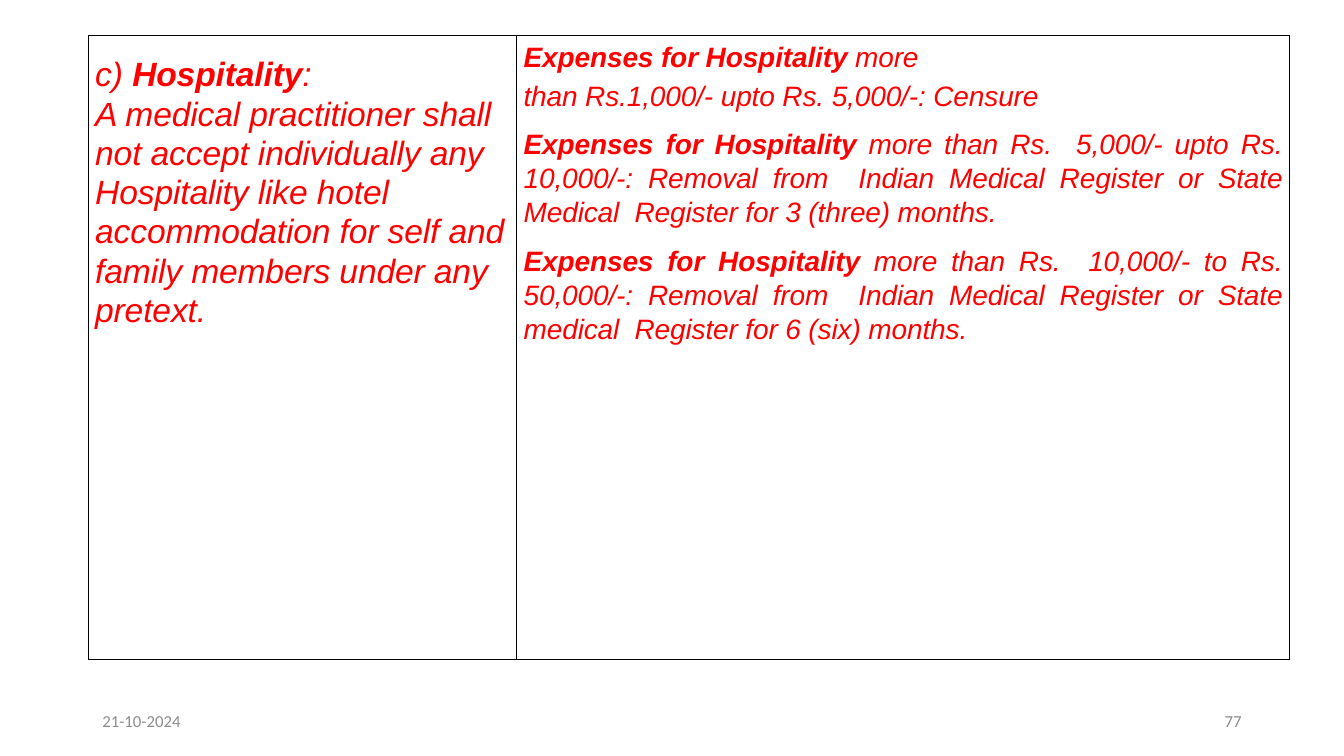
"""Build a slide with a two-column table on hospitality rules and penalties."""
from dataclasses import dataclass

from lxml import etree
from pptx import Presentation
from pptx.dml.color import RGBColor
from pptx.enum.text import MSO_ANCHOR, PP_ALIGN
from pptx.oxml.ns import qn
from pptx.util import Emu, Inches, Pt

LEFT, RIGHT, JUSTIFY = PP_ALIGN.LEFT, PP_ALIGN.RIGHT, PP_ALIGN.JUSTIFY
MIDDLE = MSO_ANCHOR.MIDDLE
GRID_COLS, GRID_ROWS = 160, 90
SLIDE_W, SLIDE_H = Inches(13.33), Inches(7.5)
RED, GREY, BLACK = "FF0000", "8C8C8C", "000000"
TABLE_LEFT, TABLE_TOP = 10.5, 4.2
COL_WIDTHS = (51, 92)
ROW_HEIGHTS = (41.4, 14.3, 14.3, 4.3)
TEXT_INSET = 0.84
FOOTER_TOP, FOOTER_W, FOOTER_H = 83.4, 36, 4.8


@dataclass(frozen=True)
class Style:
    size: float
    color: str
    font: str = "Arial"
    italic: bool = False
    tracking: int = 0


@dataclass(frozen=True)
class Run:
    text: str
    bold: bool = False


@dataclass(frozen=True)
class Para:
    runs: tuple[Run, ...]
    align: PP_ALIGN = LEFT
    spacing: float | Pt = 1.0
    before: float = 0


@dataclass(frozen=True)
class Footer:
    text: str
    left: float
    align: PP_ALIGN


RULE_STYLE = Style(24, RED, italic=True, tracking=-10)
PENALTY_STYLE = Style(20, RED, italic=True, tracking=-10)
FOOTER_STYLE = Style(12, GREY, font="Calibri")

EXPENSES = Run("Expenses for Hospitality ", bold=True)
RULE_LINES = (
    (Run("c) "), Run("Hospitality", bold=True), Run(":")),
    (Run("A medical practitioner shall"),),
    (Run("not accept individually any"),),
    (Run("Hospitality like hotel"),),
    (Run("accommodation for self and"),),
    (Run("family members under any"),),
    (Run("pretext."),),
)
RULE = tuple(Para(runs, spacing=Pt(28)) for runs in RULE_LINES)
PENALTIES = (
    Para((EXPENSES, Run("more")), JUSTIFY, Pt(27.4)),
    Para((Run("than Rs.1,000/- upto Rs. 5,000/-: Censure"),), JUSTIFY, Pt(27.4)),
    Para((EXPENSES, Run("more than Rs.  5,000/- upto Rs. 10,000/-: Removal from  Indian "
                        "Medical Register or State Medical  Register for 3 (three) months.")),
         JUSTIFY, 1.09, 10.4),
    Para((EXPENSES, Run("more than Rs.  10,000/- to Rs. 50,000/-: Removal from  Indian "
                        "Medical Register or State medical  Register for 6 (six) months.")),
         JUSTIFY, 1.09, 10.4),
)
FOOTERS = (Footer("21-10-2024", 11, LEFT), Footer("77", 113, RIGHT))


def col(n: float) -> Emu:
    """Return the width of n grid columns."""
    return Emu(round(SLIDE_W * n / GRID_COLS))


def row(n: float) -> Emu:
    """Return the height of n grid rows."""
    return Emu(round(SLIDE_H * n / GRID_ROWS))


def rgb(color: str) -> RGBColor:
    """Turn a hex string into a colour."""
    return RGBColor.from_string(color)


def write(tf, paras: tuple[Para, ...], style: Style) -> None:
    """Fill a text frame run by run."""
    for i, para in enumerate(paras):
        p = tf.add_paragraph() if i else tf.paragraphs[0]
        p.alignment = para.align
        p.line_spacing = para.spacing
        p.space_before = Pt(para.before)
        for run in para.runs:
            r = p.add_run()
            r.text = run.text
            r.font.name = style.font
            r.font.size = Pt(style.size)
            r.font.bold = run.bold
            r.font.italic = style.italic
            r.font.color.rgb = rgb(style.color)
            if style.tracking:
                r._r.get_or_add_rPr().set("spc", str(style.tracking))


def set_borders(cell, visible: str) -> None:
    """Draw the named edges of a cell and hide the others."""
    tc_pr = cell._tc.get_or_add_tcPr()
    for edge in "LRTB":
        ln = etree.SubElement(tc_pr, qn(f"a:ln{edge}"), w=str(Pt(0.5)))
        if edge in visible:
            fill = etree.SubElement(ln, qn("a:solidFill"))
            etree.SubElement(fill, qn("a:srgbClr"), val=BLACK)
        else:
            etree.SubElement(ln, qn("a:noFill"))


def add_rules_table(s) -> None:
    """Add the table, ruled around its outside and between its columns."""
    frame = s.shapes.add_table(
        len(ROW_HEIGHTS), len(COL_WIDTHS), col(TABLE_LEFT), row(TABLE_TOP),
        col(sum(COL_WIDTHS)), row(sum(ROW_HEIGHTS)))
    table = frame.table
    table.first_row = table.horz_banding = False
    for column, width in zip(table.columns, COL_WIDTHS):
        column.width = col(width)
    last = len(ROW_HEIGHTS) - 1
    for i, height in enumerate(ROW_HEIGHTS):
        table.rows[i].height = row(height)
        for cell in table.rows[i].cells:
            cell.margin_top = cell.margin_bottom = cell.margin_right = 0
            cell.margin_left = col(TEXT_INSET)
            set_borders(cell, "LR" + "T" * (i == 0) + "B" * (i == last))
            cell.fill.background()
    rule, penalty = table.rows[0].cells
    rule.margin_top = Pt(14)
    penalty.margin_right = col(TEXT_INSET)
    write(rule.text_frame, RULE, RULE_STYLE)
    write(penalty.text_frame, PENALTIES, PENALTY_STYLE)


def add_footer(s, footer: Footer) -> None:
    """Add one footer text box."""
    sp = s.shapes.add_textbox(col(footer.left), row(FOOTER_TOP), col(FOOTER_W), row(FOOTER_H))
    tf = sp.text_frame
    tf.word_wrap = True
    tf.vertical_anchor = MIDDLE
    write(tf, (Para((Run(footer.text),), footer.align),), FOOTER_STYLE)


def main() -> None:
    """Build and save the slide."""
    prs = Presentation()
    prs.slide_width, prs.slide_height = SLIDE_W, SLIDE_H
    s = prs.slides.add_slide(prs.slide_layouts[6])
    add_rules_table(s)
    for footer in FOOTERS:
        add_footer(s, footer)
    prs.save("out.pptx")


if __name__ == "__main__":
    main()
